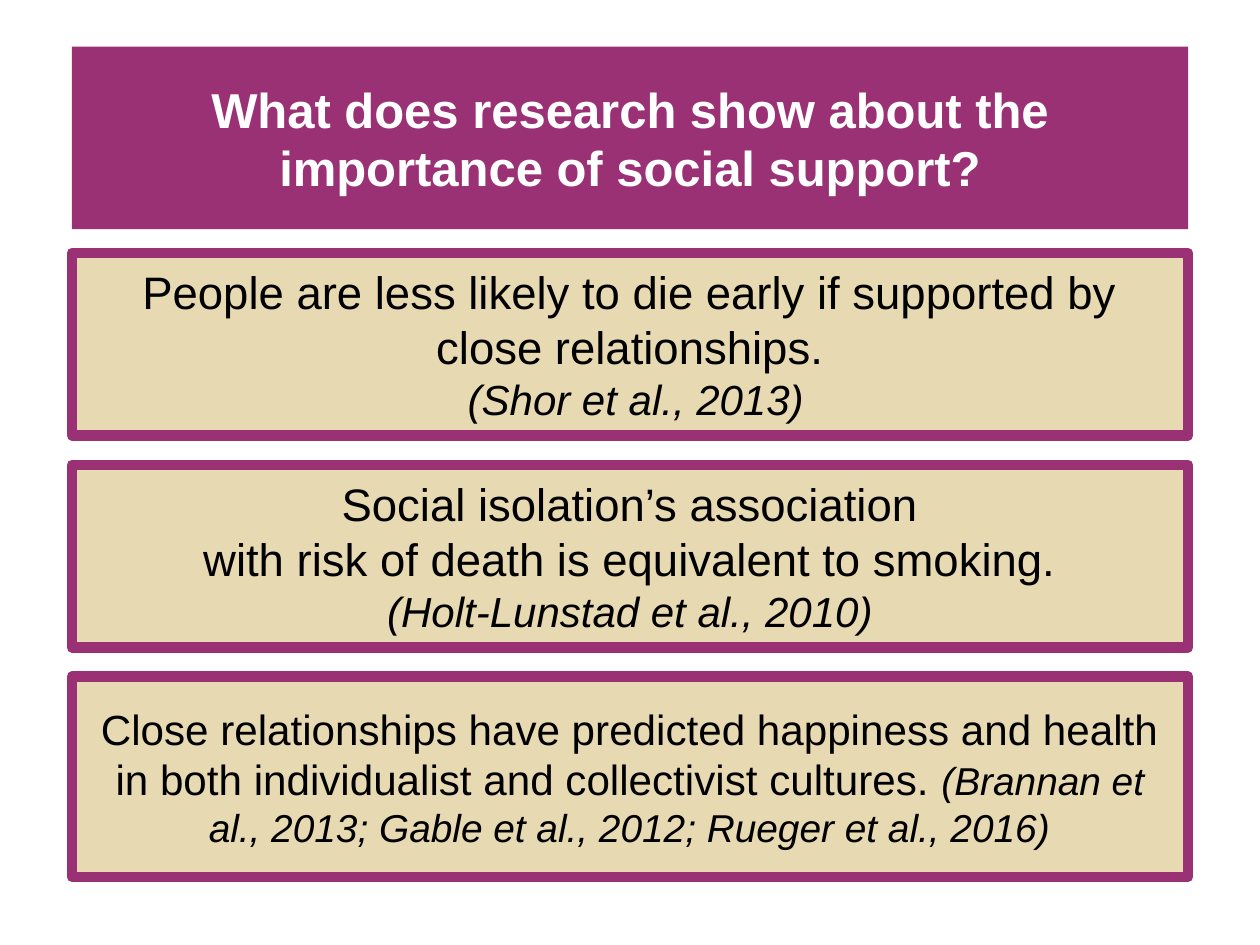
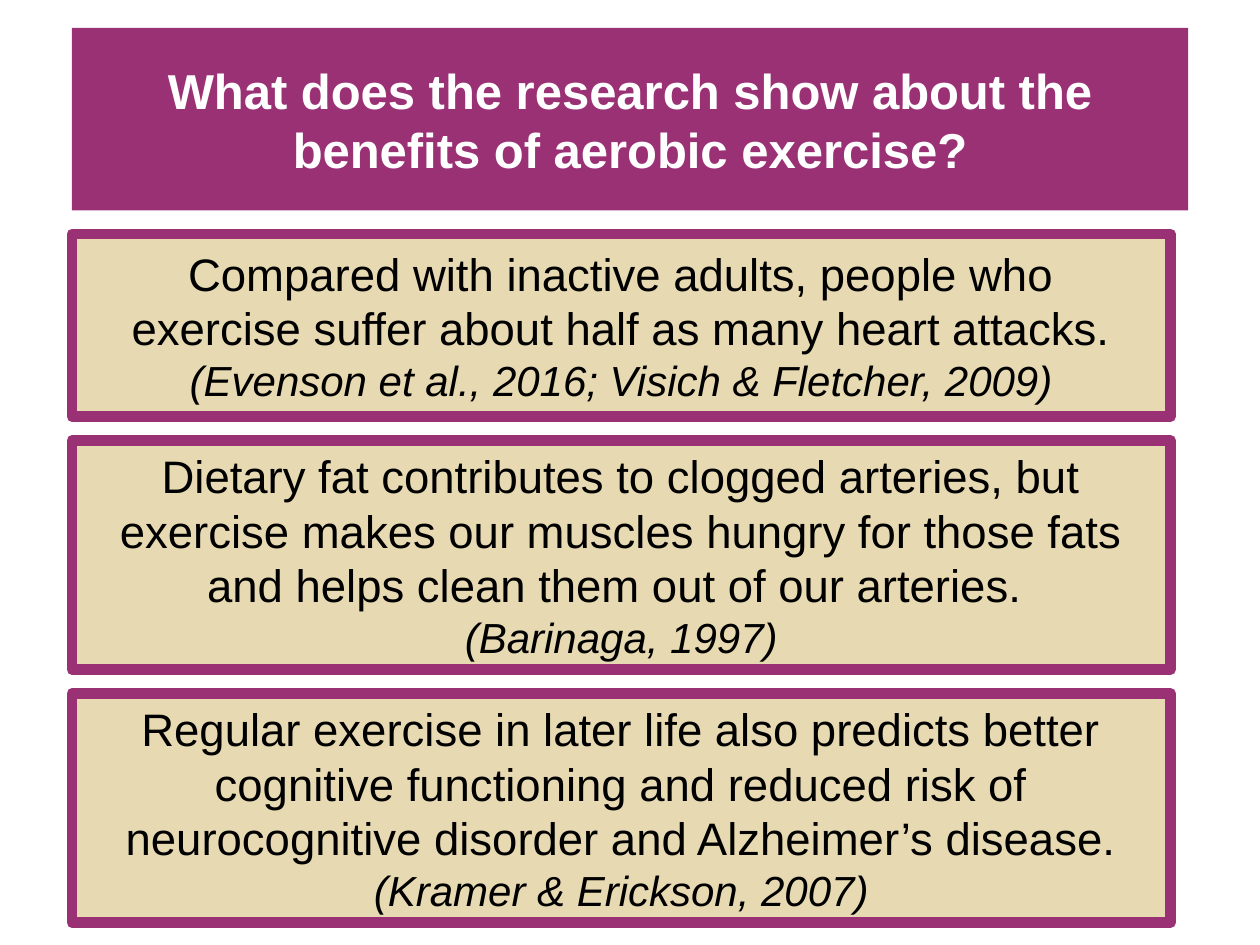
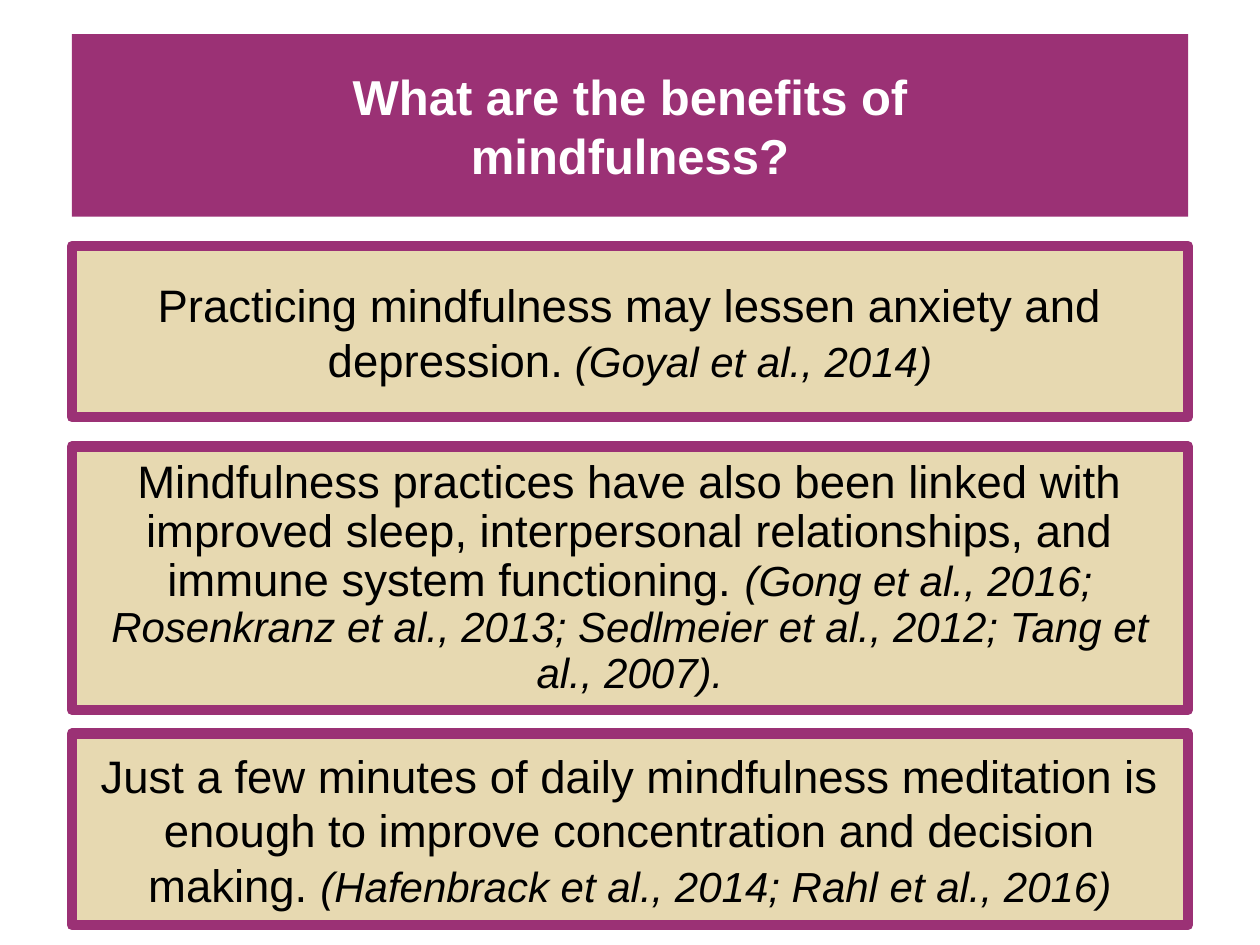
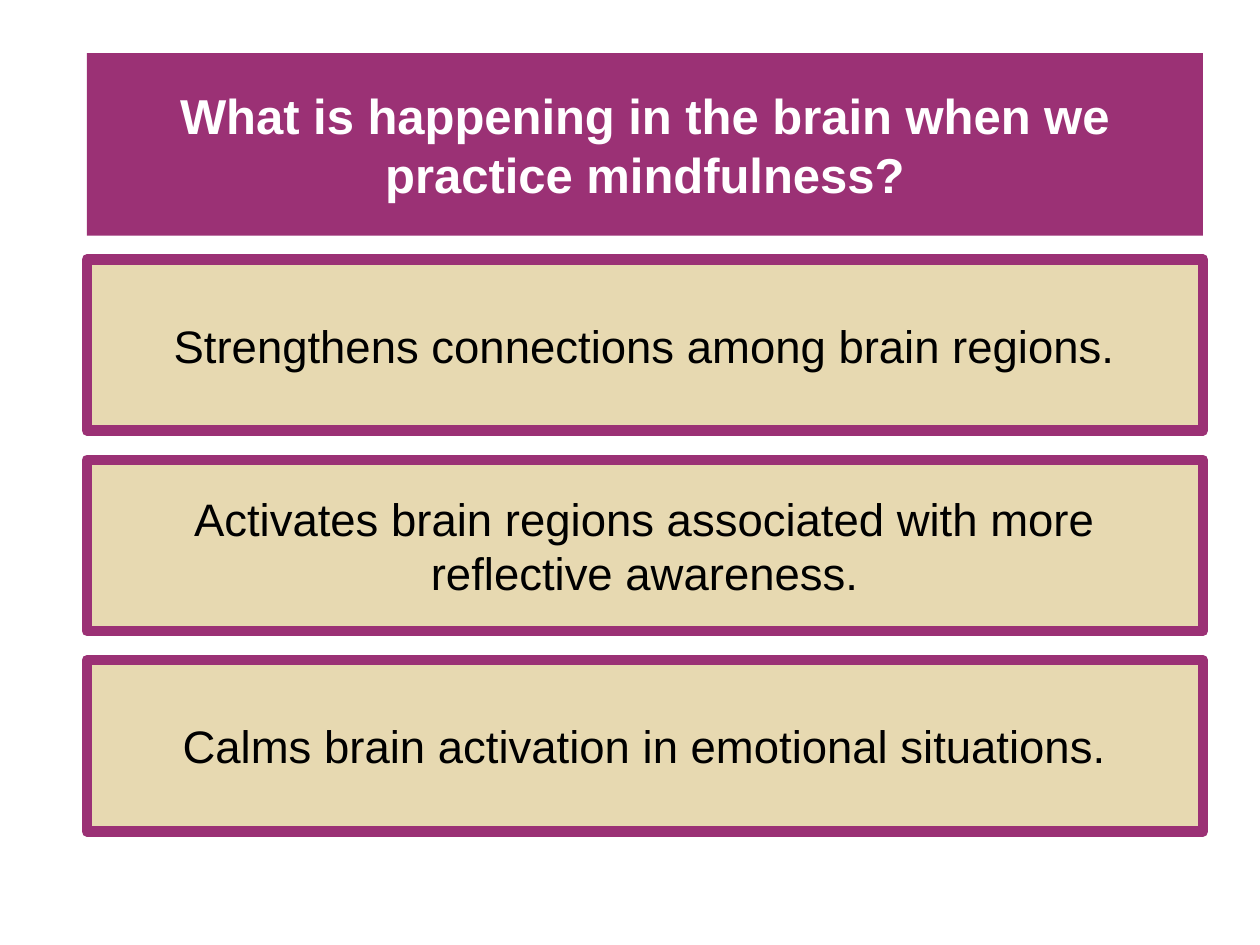
from pptx import Presentation
from pptx.dml.color import RGBColor as Rgb
from pptx.enum.shapes import MSO_SHAPE as Shape
from pptx.enum.text import MSO_ANCHOR as Anchor, MSO_AUTO_SIZE as Fit, PP_ALIGN as Align
from pptx.util import Cm, Pt

COLORS = {"plum": "9B3175", "sand": "E7D9B1", "white": "FFFFFF", "black": "000000"}
FONT = "Arial"
WIDE = 22.5
HEAD = 3.68
NEAR, FAR = 0.48, 0.59


def color(name):
    return Rgb.from_string(COLORS[name])


def say(text, size=26):
    return text, size, False


def cite(text, size=24):
    return text, size, True


class Deck:
    """Holds the shared style, the current slide and the next free height on it."""

    def __init__(self):
        self.prs = Presentation()
        self.prs.slide_width, self.prs.slide_height = Cm(25.4), Cm(19.05)

    def place(self, shape, height, fill):
        shape.left, shape.top = Cm(self.left), Cm(self.top)
        shape.width, shape.height = Cm(self.width), Cm(height)
        shape.fill.solid()
        shape.fill.fore_color.rgb = color(fill)
        frame = shape.text_frame
        frame.word_wrap = True
        frame.auto_size = Fit.NONE
        frame.vertical_anchor = Anchor.MIDDLE
        self.top += height
        return frame

    def run(self, para, text, size, ink, bold=False, italic=False):
        run = para.add_run()
        run.text = text
        font = run.font
        font.name, font.size = FONT, Pt(size)
        font.bold, font.italic = bold, italic
        font.color.rgb = color(ink)

    def title(self, text, top, left=1.45, width=WIDE):
        """Start a slide; width is that of the cards under the title."""
        self.slide = self.prs.slides.add_slide(self.prs.slide_layouts[5])
        self.left, self.top, self.width = left, top, WIDE
        para = self.place(self.slide.shapes.title, HEAD, "plum").paragraphs[0]
        para.alignment = Align.CENTER
        for i, line in enumerate(text.split("\n")):
            if i:
                para.add_line_break()
            self.run(para, line, 28, "white", bold=True)
        self.width = width

    def card(self, gap, height, *paras, space=None):
        """Add a framed box below the last one; each paragraph is a list of runs."""
        self.top += gap
        box = self.slide.shapes.add_shape(Shape.RECTANGLE, 0, 0, 0, 0)
        box.shadow.inherit = False
        box.line.color.rgb = color("plum")
        box.line.width = Pt(6)
        frame = self.place(box, height, "sand")
        for i, runs in enumerate(paras):
            para = frame.add_paragraph() if i else frame.paragraphs[0]
            para.alignment = Align.CENTER
            if space:
                para.line_spacing = space
            for text, size, italic in runs:
                self.run(para, text, size, "black", italic=italic)


def support(deck):
    deck.title("What does research show about the importance of social support?", 0.94)
    deck.card(NEAR, 3.68,
              [say("People are less likely to die early if supported by close relationships.")],
              [cite(" (Shor et al., 2013)")])
    deck.card(FAR, 3.68,
              [say("Social isolation’s association")],
              [say("with risk of death is equivalent to smoking.")],
              [cite("(Holt-Lunstad et al., 2010)")])
    deck.card(FAR, 4.04,
              [say("Close relationships have predicted happiness and health in both "
                   "individualist and collectivist cultures. ", 24.1),
               cite("(Brannan et al., 2013; Gable et al., 2012; Rueger et al., 2016)", 22.2)])


def exercise(deck):
    deck.title("What does the research show about the benefits of aerobic exercise?",
               0.56, width=22.15)
    deck.card(NEAR, 3.68,
              [say("Compared with inactive adults, people who")],
              [say("exercise suffer about half as many heart attacks. "),
               cite("(Evenson et al., 2016; Visich & Fletcher, 2009)")])
    deck.card(NEAR, 4.62,
              [say("Dietary fat contributes to clogged arteries, but exercise makes our "
                   "muscles hungry for those fats and helps clean them out of our arteries. ")],
              [cite("(Barinaga, 1997)")])
    deck.card(NEAR, 4.62,
              [say("Regular exercise in later life also predicts better cognitive functioning "
                   "and reduced risk of neurocognitive disorder and Alzheimer’s disease. "),
               cite("(Kramer & Erickson, 2007)")])


def mindful(deck):
    deck.title("What are the benefits of\nmindfulness?", 0.69)
    deck.card(FAR, 3.45,
              [say("Practicing mindfulness may lessen anxiety and depression."),
               say(" ", 24), cite("(Goyal et al., 2014)")])
    deck.card(FAR, 5.31,
              [say("Mindfulness practices have also been linked with improved sleep, "
                   "interpersonal relationships, and immune system functioning. "),
               cite("(Gong et al., 2016; Rosenkranz et al., 2013; Sedlmeier et al., 2012; "
                    "Tang et al., 2007).")],
              space=0.9)
    deck.card(NEAR, 3.86,
              [say("Just a few minutes of daily mindfulness meditation is enough to improve "
                   "concentration and decision making. "),
               cite("(Hafenbrack et al., 2014; Rahl et al., 2016)")])


def brain(deck):
    deck.title("What is happening in the brain when we practice mindfulness?", 1.07, left=1.75)
    facts = ["Strengthens connections among brain regions.",
             "Activates brain regions associated with more reflective awareness.",
             "Calms brain activation in emotional situations."]
    for gap, fact in zip((NEAR, FAR, FAR), facts):
        deck.card(gap, 3.45, [say(fact)])


def main():
    deck = Deck()
    for build in (support, exercise, mindful, brain):
        build(deck)
    deck.prs.save("out.pptx")


if __name__ == "__main__":
    main()
